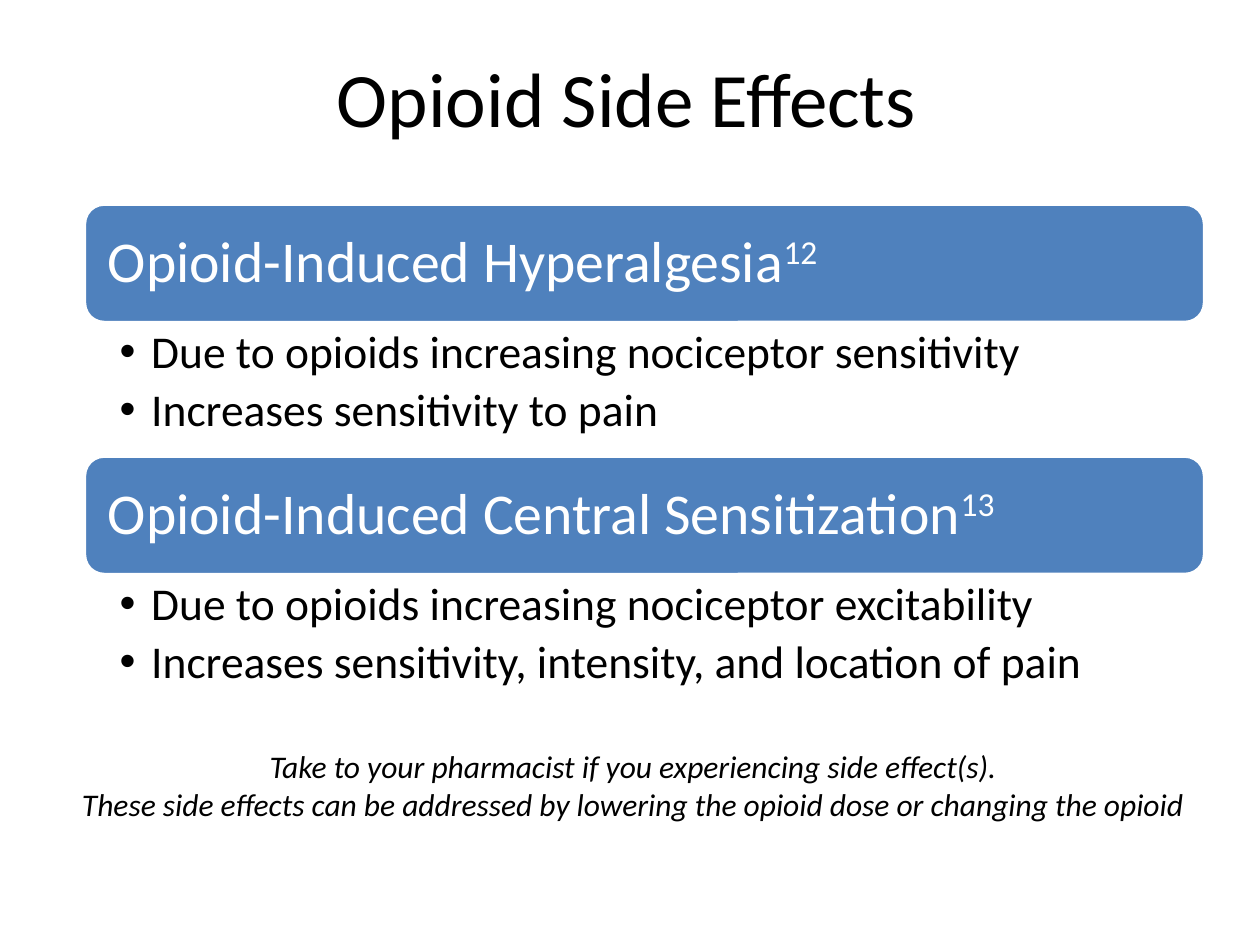
import dataclasses
import typing

import lxml.etree
import pptx
import pptx.dml.color
import pptx.enum.shapes
import pptx.enum.text
import pptx.oxml.ns
import pptx.util

Inches = pptx.util.Inches
Pt = pptx.util.Pt
Align = pptx.enum.text.PP_ALIGN
Anchor = pptx.enum.text.MSO_ANCHOR


@dataclasses.dataclass(frozen=True)
class Theme:
    font: str = "Calibri"
    text: str = "000000"
    light: str = "FFFFFF"
    accent: str = "4F81BD"
    title_size: float = 44
    heading_size: float = 33
    bullet_size: float = 26
    note_size: float = 18


@dataclasses.dataclass(frozen=True)
class Section:
    heading: str
    reference: str
    bullets: tuple[str, ...]


THEME = Theme()
SECTIONS = (
    Section("Opioid-Induced Hyperalgesia", "12", (
        "Due to opioids increasing nociceptor sensitivity",
        "Increases sensitivity to pain",
    )),
    Section("Opioid-Induced Central Sensitization", "13", (
        "Due to opioids increasing nociceptor excitability",
        "Increases sensitivity, intensity, and location of pain",
    )),
)
NOTE = (
    "Take to your pharmacist if you experiencing side effect(s).",
    "These side effects can be addressed by lowering the opioid dose or changing the opioid",
)
SECTION_LEFT, SECTION_TOP, SECTION_WIDTH = 0.67, 1.62, 8.89
HEADING_HEIGHT, LIST_HEIGHT = 0.94, 1.06


def rgb(color: str) -> pptx.dml.color.RGBColor:
    return pptx.dml.color.RGBColor.from_string(color)


def place(shape: typing.Any, left: float, top: float, width: float, height: float) -> None:
    shape.left, shape.top = Inches(left), Inches(top)
    shape.width, shape.height = Inches(width), Inches(height)


def add_text(paragraph: typing.Any, text: str, *, size: float, color: str = THEME.text,
             italic: bool = False, superscript: bool = False) -> None:
    """Append one formatted run to a paragraph."""
    run = paragraph.add_run()
    run.text = text
    run.font.name = THEME.font
    run.font.size = Pt(size)
    run.font.color.rgb = rgb(color)
    run.font.italic = italic
    if superscript:
        run._r.get_or_add_rPr().set("baseline", "30000")


def set_frame(frame: typing.Any, anchor: typing.Any, left: float = 0.1, top: float = 0.05,
              right: float = 0.1, bottom: float = 0.05) -> None:
    frame.word_wrap = True
    frame.auto_size = pptx.enum.text.MSO_AUTO_SIZE.NONE
    frame.vertical_anchor = anchor
    frame.margin_left, frame.margin_right = Inches(left), Inches(right)
    frame.margin_top, frame.margin_bottom = Inches(top), Inches(bottom)


def add_lines(frame: typing.Any, lines: tuple[str, ...], **text_format: typing.Any) -> list:
    """Write one paragraph per line and return the paragraphs."""
    paragraphs = [frame.paragraphs[0]] + [frame.add_paragraph() for _ in lines[1:]]
    for paragraph, line in zip(paragraphs, lines):
        add_text(paragraph, line, **text_format)
    return paragraphs


def set_bullet(paragraph: typing.Any) -> None:
    properties = paragraph._p.get_or_add_pPr()
    properties.set("marL", str(Inches(0.25)))
    properties.set("indent", str(Inches(-0.25)))
    bullet = lxml.etree.SubElement(properties, pptx.oxml.ns.qn("a:buChar"))
    bullet.set("char", "•")


def draw_heading(slide: typing.Any, section: Section, top: float) -> None:
    bar = slide.shapes.add_shape(
        pptx.enum.shapes.MSO_SHAPE.ROUNDED_RECTANGLE, Inches(SECTION_LEFT), Inches(top),
        Inches(SECTION_WIDTH), Inches(HEADING_HEIGHT))
    bar.shadow.inherit = False
    bar.fill.solid()
    bar.fill.fore_color.rgb = rgb(THEME.accent)
    bar.line.color.rgb = rgb(THEME.light)
    bar.line.width = Pt(2)
    set_frame(bar.text_frame, Anchor.MIDDLE, 0.14, 0.14, 0.14, 0.14)
    paragraph = bar.text_frame.paragraphs[0]
    paragraph.alignment = Align.LEFT
    paragraph.line_spacing = 0.9
    add_text(paragraph, section.heading, size=THEME.heading_size, color=THEME.light)
    add_text(paragraph, section.reference, size=THEME.heading_size, color=THEME.light,
             superscript=True)


def fill_list(placeholder: typing.Any, section: Section, top: float) -> None:
    place(placeholder, SECTION_LEFT, top, SECTION_WIDTH, LIST_HEIGHT)
    set_frame(placeholder.text_frame, Anchor.TOP, left=0.28, right=0.26)
    for paragraph in add_lines(placeholder.text_frame, section.bullets, size=THEME.bullet_size):
        paragraph.line_spacing = 0.9
        paragraph.space_before = Pt(0)
        paragraph.space_after = Pt(0.2 * THEME.bullet_size)
        set_bullet(paragraph)


def main() -> None:
    presentation = pptx.Presentation()
    presentation.slide_width, presentation.slide_height = Inches(10), Inches(7.5)
    # The "Two Content" layout offers a title and one list per section
    slide = presentation.slides.add_slide(presentation.slide_layouts[3])

    # Title
    title = slide.shapes.title
    place(title, 0, 0.14, 9.95, 1.25)
    set_frame(title.text_frame, Anchor.MIDDLE)
    title.text_frame.paragraphs[0].alignment = Align.CENTER
    add_text(title.text_frame.paragraphs[0], "Opioid Side Effects", size=THEME.title_size)

    # Sections: heading bar with its list below
    for index, section in enumerate(SECTIONS):
        top = SECTION_TOP + index * (HEADING_HEIGHT + LIST_HEIGHT)
        draw_heading(slide, section, top)
        fill_list(slide.placeholders[index + 1], section, top + HEADING_HEIGHT)

    # Closing note
    note = slide.shapes.add_textbox(Inches(0.5), Inches(5.88), Inches(9.05), Inches(0.71))
    set_frame(note.text_frame, Anchor.TOP)
    for paragraph in add_lines(note.text_frame, NOTE, size=THEME.note_size, italic=True):
        paragraph.alignment = Align.CENTER

    presentation.save("out.pptx")


if __name__ == "__main__":
    main()
